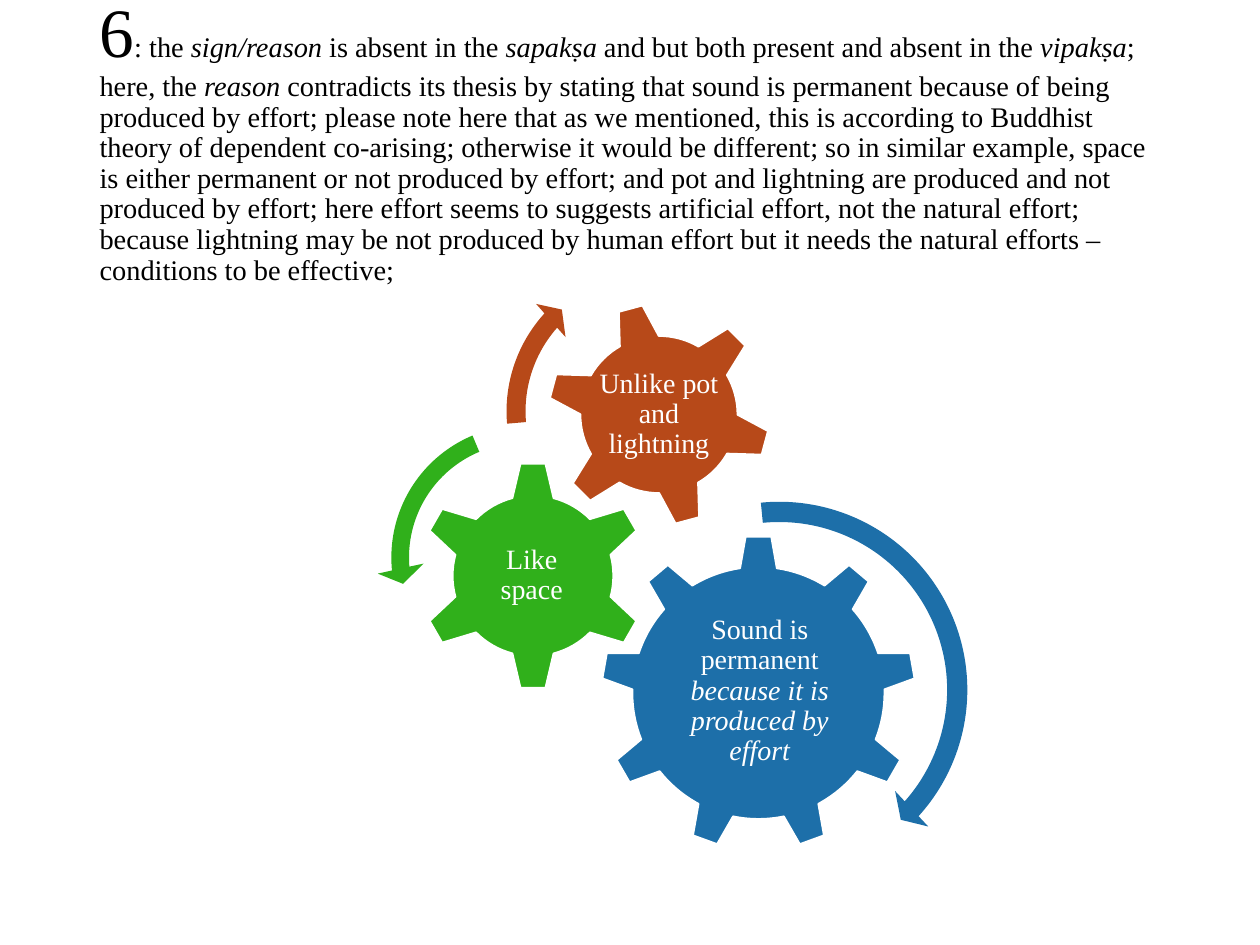
from pptx import Presentation
from pptx import util as u
from pptx.dml.color import RGBColor
from pptx.enum import shapes, text

Inches = u.Inches
BLUE, GREEN, ORANGE, WHITE, BLACK = "1D6FA9", "30B01B", "B74919", "FFFFFF", "000000"
KINDS = shapes.MSO_SHAPE


def add_filled(kind, left, top, size, color):
    shape = page.shapes.add_shape(kind, Inches(left), Inches(top), Inches(size), Inches(size))
    shape.shadow.inherit = False
    shape.fill.solid()
    shape.fill.fore_color.rgb = RGBColor.from_string(color)
    shape.line.fill.background()
    return shape


def write(frame, runs, color, align, inset_x, inset_y):
    frame_format = {
        "word_wrap": True, "auto_size": text.MSO_AUTO_SIZE.NONE,
        "vertical_anchor": text.MSO_ANCHOR.MIDDLE,
        "margin_left": Inches(inset_x), "margin_right": Inches(inset_x),
        "margin_top": Inches(inset_y), "margin_bottom": Inches(inset_y),
    }
    for name, value in frame_format.items():
        setattr(frame, name, value)
    para = frame.paragraphs[0]
    para.alignment = align
    para.line_spacing = 0.9
    for words, size, italic in runs:
        span = para.add_run()
        span.text = words
        font_format = {"name": "Times New Roman", "size": u.Pt(size), "italic": italic}
        for name, value in font_format.items():
            setattr(span.font, name, value)
        span.font.color.rgb = RGBColor.from_string(color)


deck = Presentation()
deck.slide_width, deck.slide_height = Inches(10), Inches(7.5)
page = deck.slides.add_slide(deck.slide_layouts[5])

title = page.shapes.title
title.left, title.top, title.width, title.height = map(Inches, (0.69, 0.4, 8.62, 1.45))
phrases = [
    (": the ", False),
    ("sign/reason", True),
    (" is absent in the ", False),
    ("sapakṣa", True),
    (" and but both present and absent in the ", False),
    ("vipakṣa", True),
    ("; here, the ", False),
    ("reason", True),
    (" contradicts its thesis by stating that sound is permanent because of being "
     "produced by effort; please note here that as we mentioned, this is according to "
     "Buddhist theory of dependent co-arising; otherwise it would be different; so in "
     "similar example, space is either permanent or not produced by effort; and pot and "
     "lightning are produced and not produced by effort; here effort seems to suggests "
     "artificial effort, not the natural effort; because lightning may be not produced "
     "by human effort but it needs the natural efforts – conditions to be effective;", False),
]
title_runs = [("6", 39.6, False)] + [(words, 16.2, italic) for words, italic in phrases]
write(title.text_frame, title_runs, BLACK, text.PP_ALIGN.LEFT, 0.1, 0.05)

gears = [
    (KINDS.GEAR_9, 4.77, 4.25, 2.5, 0, BLUE, (5.28, 4.84, 1.5, 1.29),
     [("Sound is permanent ", 16, False), ("because it is produced by effort", 16, True)]),
    (KINDS.GEAR_6, 3.32, 3.66, 1.82, 0, GREEN, (3.77, 4.12, 0.9, 0.9),
     [("Like space", 16, False)]),
    (KINDS.GEAR_6, 4.34, 2.4, 1.78, -15, ORANGE, (4.73, 2.79, 1, 1),
     [("Unlike pot and lightning", 16, False)]),
]
for kind, left, top, size, turn, color, label_area, runs in gears:
    gear = add_filled(kind, left, top, size, color)
    gear.rotation = turn
    gear.line.color.rgb = RGBColor.from_string(WHITE)
    gear.line.width = u.Pt(1)
    label = page.shapes.add_textbox(*map(Inches, label_area))
    write(label.text_frame, runs, WHITE, text.PP_ALIGN.CENTER, 0.02, 0.02)

arrows = [
    (KINDS.CIRCULAR_ARROW, 4.58, 3.87, 3.21, BLUE, (0.05, 2.99, 25.16, 158.63, 0.06)),
    (KINDS.LEFT_CIRCULAR_ARROW, 2.99, 3.26, 2.33, GREEN, (0.06, 4.3, 104.89, 148.38, 0.08)),
    (KINDS.CIRCULAR_ARROW, 3.92, 2.01, 2.51, ORANGE, (0.06, 3.94, 133.14, 105.08, 0.07)),
]
for kind, left, top, size, color, bends in arrows:
    arrow = add_filled(kind, left, top, size, color)
    for index, bend in enumerate(bends):
        arrow.adjustments[index] = bend

deck.save("out.pptx")
